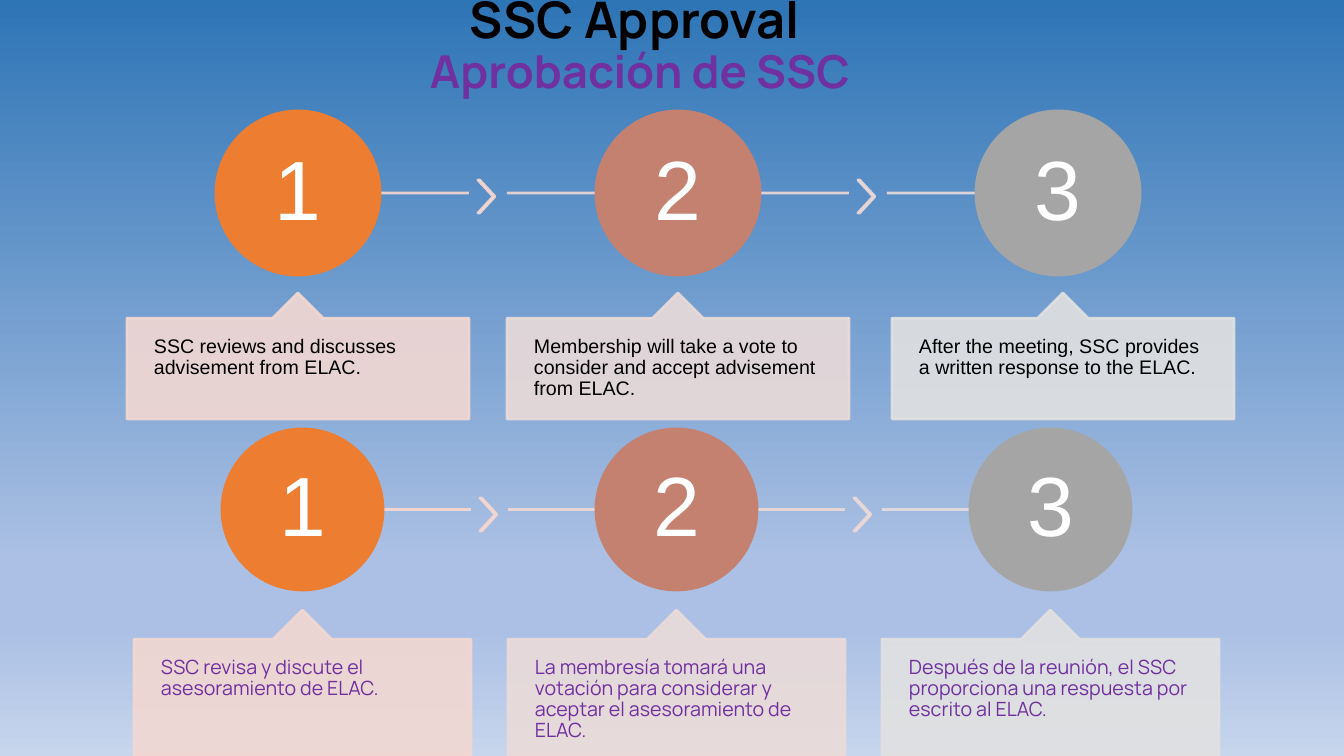
from lxml import etree
from pptx import Presentation
from pptx.dml.color import RGBColor
from pptx.enum.shapes import MSO_CONNECTOR, MSO_SHAPE
from pptx.enum.text import MSO_ANCHOR, PP_ALIGN
from pptx.oxml.ns import qn
from pptx.util import Pt

STRAIGHT = MSO_CONNECTOR.STRAIGHT
OVAL, CHEVRON, CALLOUT = MSO_SHAPE.OVAL, MSO_SHAPE.CHEVRON, MSO_SHAPE.UP_ARROW_CALLOUT
TOP, MIDDLE = MSO_ANCHOR.TOP, MSO_ANCHOR.MIDDLE
LEFT, CENTER = PP_ALIGN.LEFT, PP_ALIGN.CENTER

TITLE = [("SSC Approval", 36, "000000", 40), ("Aprobación de SSC", 32.4, "7030A0", 0)]
BACKGROUND = [(0, "2E75B6"), (74, "ABC0E4"), (83, "ABC0E4"), (100, "C7D5ED")]
STEP_COLORS = [
    {"circle": "ED7D31", "line": "F8D7CE", "chevron": "F5D7D0", "callout": "F2D8D2"},
    {"circle": "C48170", "line": "F0D8D4", "chevron": "EDD9D7", "callout": "EADBD9"},
    {"circle": "A5A5A5", "line": "E7DCDC", "callout": "E1E1E1"},
]
ROWS = [
    {"x": 216, "y": 111, "size": 164, "pitch": 380, "callout_y": 293,
     "callout_w": 342, "callout_h": 126, "shifts": (0, 0, 5),
     "font": "Arial", "color": "000000",
     "texts": ["SSC reviews and discusses advisement from ELAC.",
               "Membership will take a vote to consider and accept advisement from ELAC.",
               "After the meeting, SSC provides a written response to the ELAC."]},
    {"x": 222, "y": 429, "size": 161, "pitch": 374, "callout_y": 610,
     "callout_w": 337, "callout_h": 146, "shifts": (0, 0, 0),
     "font": "Manrope", "color": "7030A0",
     "texts": ["SSC revisa y discute el asesoramiento de ELAC.",
               "La membresía tomará una votación para considerar y aceptar el asesoramiento de ELAC.",
               "Después de la reunión, el SSC proporciona una respuesta por escrito al ELAC."]},
]


def px(n):
    return round(n * 914400 / 100.8)


def rgb(value):
    return RGBColor.from_string(value)


def set_alpha(fill_parent):
    color = fill_parent.find(qn("a:solidFill")).find(qn("a:srgbClr"))
    etree.SubElement(color, qn("a:alpha")).set("val", "90000")


def set_frame(tf, margin_x, margin_y, anchor):
    tf.word_wrap = True
    tf.margin_left = tf.margin_right = px(margin_x)
    tf.margin_top = tf.margin_bottom = px(margin_y)
    tf.vertical_anchor = anchor


def add_run(p, text, size, font, color, align, bold=False):
    p.alignment = align
    p.line_spacing = 0.9
    r = p.add_run()
    r.text = text
    r.font.size = Pt(size)
    r.font.name = font
    r.font.bold = bold
    r.font.color.rgb = rgb(color)


def add_shape(s, kind, x, y, w, h, color, adjustments=(), clear=True):
    sp = s.shapes.add_shape(kind, px(x), px(y), px(w), px(h))
    sp.shadow.inherit = False
    for i, value in enumerate(adjustments):
        sp.adjustments[i] = value
    sp.fill.solid()
    sp.fill.fore_color.rgb = rgb(color)
    sp.line.color.rgb = rgb(color)
    sp.line.width = Pt(2)
    if clear:
        set_alpha(sp._element.spPr)
        set_alpha(sp._element.spPr.find(qn("a:ln")))
    return sp


def add_line(s, x1, x2, y, color):
    line = s.shapes.add_connector(STRAIGHT, px(x1), px(y), px(x2), px(y))
    line.line.color.rgb = rgb(color)
    line.line.width = Pt(2)
    spPr = line._element.spPr
    set_alpha(spPr.find(qn("a:ln")))
    etree.SubElement(spPr, qn("a:effectLst"))


def add_background(s):
    fill = s.background.fill
    fill.gradient()
    fill.gradient_angle = 270
    stops = s._element.cSld.find(".//" + qn("a:gsLst"))
    for stop in list(stops):
        stops.remove(stop)
    for position, color in BACKGROUND:
        stop = etree.SubElement(stops, qn("a:gs"), pos=str(position * 1000))
        etree.SubElement(stop, qn("a:srgbClr"), val=color)


def add_title(s):
    title = s.shapes.title
    title.left, title.top, title.width, title.height = px(420), px(-12), px(1068), px(146)
    tf = title.text_frame
    set_frame(tf, 10, 7, TOP)
    for i, (text, size, color, indent) in enumerate(TITLE):
        p = tf.paragraphs[0] if i == 0 else tf.add_paragraph()
        p.space_before = Pt(0)
        p._p.get_or_add_pPr().set("marL", str(px(indent)))
        add_run(p, text, size, "Manrope", color, LEFT, True)


def add_row(s, row):
    size, width = row["size"], row["callout_w"]
    last = len(STEP_COLORS) - 1
    for i, colors in enumerate(STEP_COLORS):
        x = row["x"] + i * row["pitch"]
        center = x + size / 2
        left, right = center - width / 2, center + width / 2
        add_line(s, center if i == 0 else left, center if i == last else right,
                 row["y"] + size / 2, colors["line"])
        if i < last:
            add_shape(s, CHEVRON, right + 9, row["y"] + 69, 17, 33, colors["chevron"], [0.9])
        circle = add_shape(s, OVAL, x, row["y"], size, size, colors["circle"], clear=False)
        set_frame(circle.text_frame, 6, 6, MIDDLE)
        add_run(circle.text_frame.paragraphs[0], str(i + 1), 60, "Arial", "FFFFFF", CENTER)
        callout = add_shape(s, CALLOUT, left + row["shifts"][i], row["callout_y"], width,
                            row["callout_h"], colors["callout"], [0.5, 0.2, 0.2, 1])
        set_frame(callout.text_frame, 27, 18, TOP)
        add_run(callout.text_frame.paragraphs[0], row["texts"][i], 14, row["font"],
                row["color"], LEFT)


def main():
    prs = Presentation()
    prs.slide_width, prs.slide_height = px(1344), px(756)
    s = prs.slides.add_slide(prs.slide_layouts[5])
    add_background(s)
    add_title(s)
    for row in ROWS:
        add_row(s, row)
    prs.save("out.pptx")


if __name__ == "__main__":
    main()
